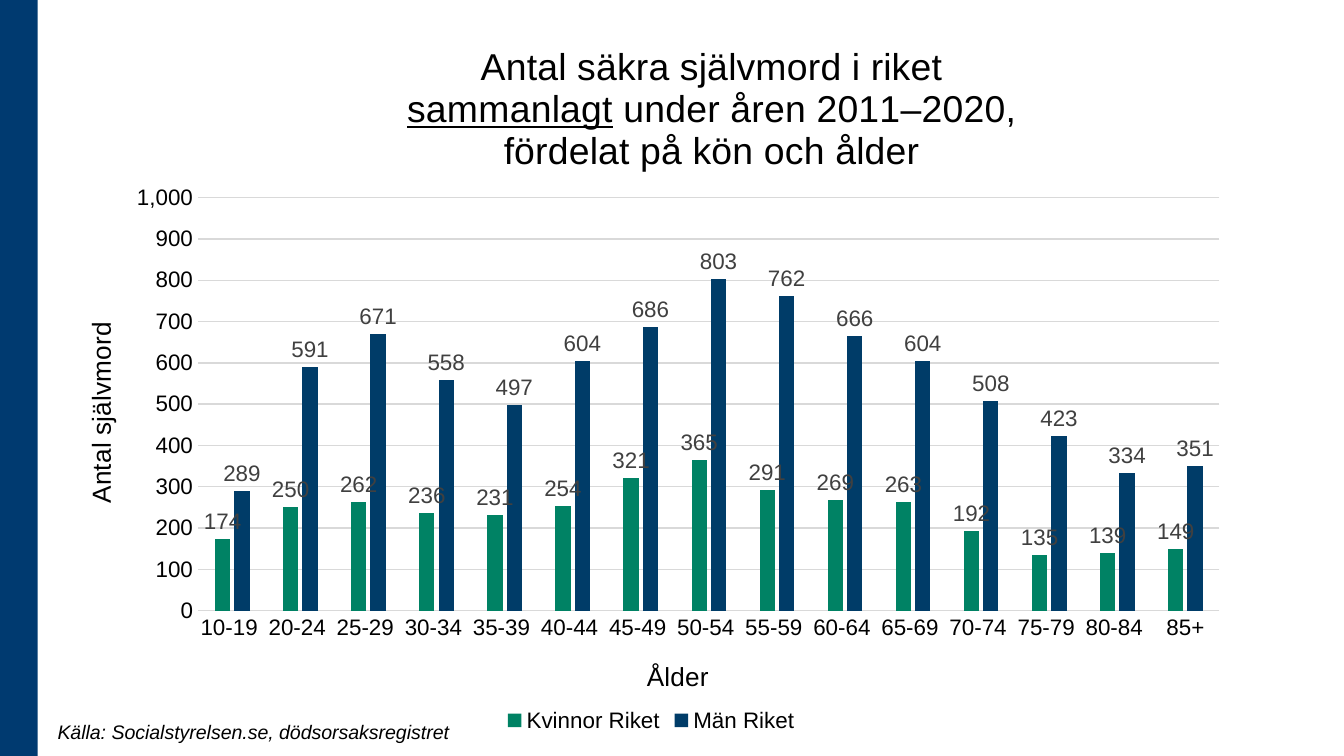
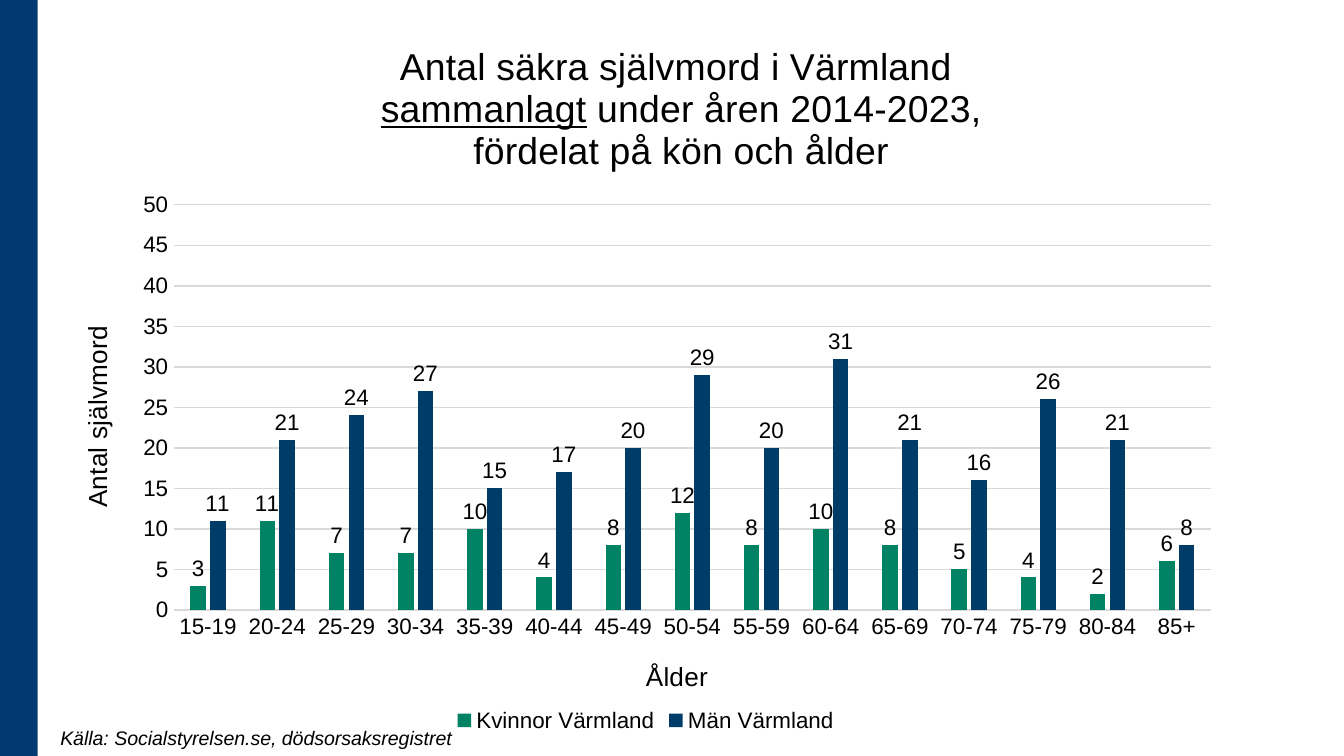
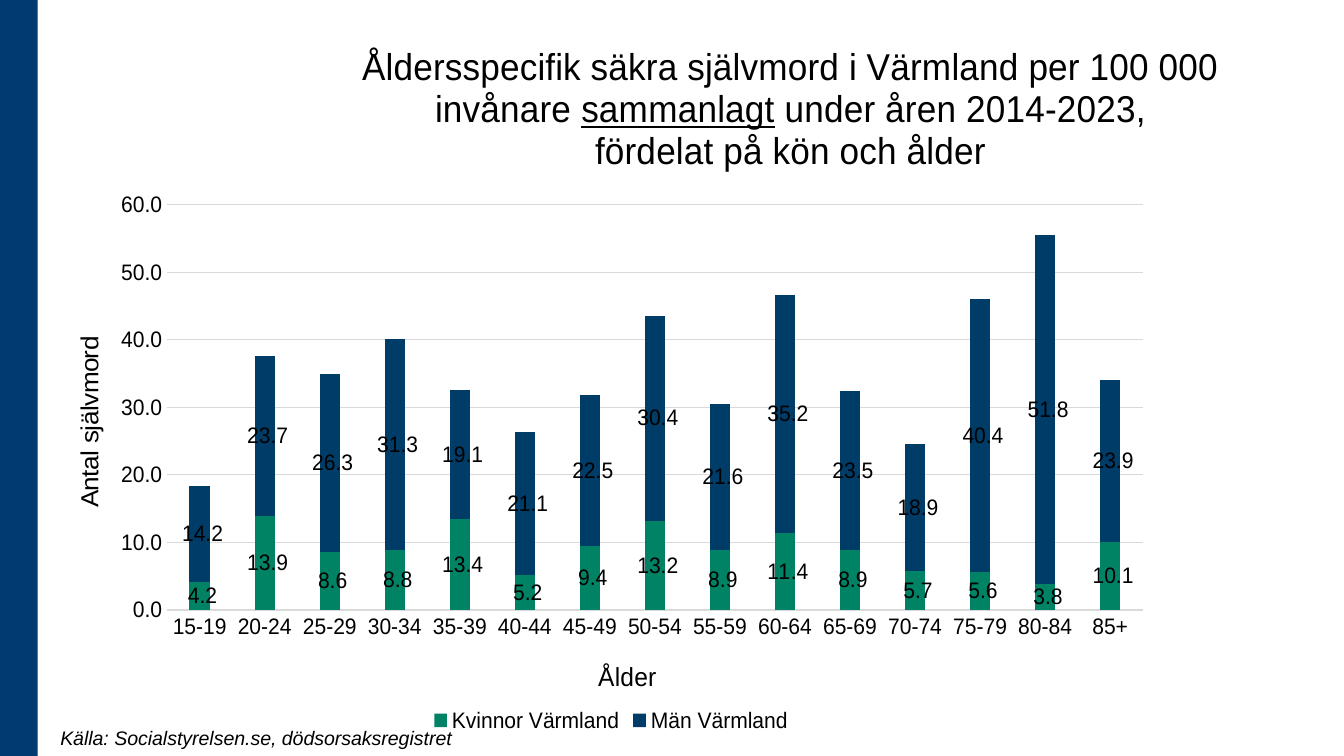
"""Build three slides with column charts of suicides by sex and age."""
from lxml import etree
from pptx import Presentation
from pptx.chart.data import CategoryChartData
from pptx.dml.color import RGBColor
from pptx.enum import chart as charts, shapes, text
from pptx.oxml.ns import qn
from pptx.util import Inches, Pt

FONT = "Arial"
BLACK, GRAY, GRID, BAND = "000000", "404040", "D9D9D9", "003A70"
SERIES_COLORS = ["008264", "003C68"]
SOURCE = "Källa: Socialstyrelsen.se, dödsorsaksregistret"
AGES = [f"{age}-{age + 4}" for age in range(20, 85, 5)]
CLUSTERED = charts.XL_CHART_TYPE.COLUMN_CLUSTERED
STACKED = charts.XL_CHART_TYPE.COLUMN_STACKED
OUTSIDE = charts.XL_LABEL_POSITION.OUTSIDE_END

VARMLAND = {
    "ages": ["15-19", *AGES, "85+"],
    "at": (0.51, 0.21, 8.59, 5.28),
    "plot": (9.1, 24.9, 89.9, 57.1),
    "title_at": (26.7, 1.7),
    "source_at": (0.35, 5.35, 3.29, 0.28),
    "label_color": BLACK,
}
SLIDES = [
    {
        "title": ["Antal säkra självmord i riket",
                  "_sammanlagt_ under åren 2011–2020,",
                  "fördelat på kön och ålder"],
        "ages": [f"{age} " for age in ["10-19", *AGES]] + ["85+"],
        "at": (0.59, 0.21, 8.51, 5.28),
        "plot": (10.4, 23.9, 89.3, 58.2),
        "title_at": (28.3, 1.7),
        "age_at": (49.2, 88.3),
        "count_at": (0, 40.7),
        "source_at": (0.33, 5.31, 3.2, 0.28),
        "label_color": GRAY,
        "type": CLUSTERED, "overlap": -27, "max": 1000,
        "format": "#,##0", "label_position": None,
        "series": {
            "Kvinnor Riket": [174, 250, 262, 236, 231, 254, 321, 365,
                              291, 269, 263, 192, 135, 139, 149],
            "Män Riket": [289, 591, 671, 558, 497, 604, 686, 803,
                          762, 666, 604, 508, 423, 334, 351],
        },
    },
    {
        **VARMLAND,
        "title": ["Antal säkra självmord i Värmland ",
                  "_sammanlagt_ under åren 2014-2023,",
                  "fördelat på kön och ålder"],
        "age_at": (49.6, 88.3),
        "count_at": (0.6, 41.3),
        "type": CLUSTERED, "overlap": -27, "max": 50,
        "format": "#,##0", "label_position": OUTSIDE,
        "series": {
            "Kvinnor Värmland": [3, 11, 7, 7, 10, 4, 8, 12,
                                 8, 10, 8, 5, 4, 2, 6],
            "Män Värmland": [11, 21, 24, 27, 15, 17, 20, 29,
                             20, 31, 21, 16, 26, 21, 8],
        },
    },
    {
        **VARMLAND,
        "title": ["Åldersspecifik säkra självmord i Värmland per 100 000 "
                  "invånare _sammanlagt_ under åren 2014-2023,",
                  "fördelat på kön och ålder"],
        "age_at": (48.4, 88.3),
        "count_at": (0, 41.3),
        "type": STACKED, "overlap": 100, "max": 60,
        "format": r"#\ ##0.0", "label_position": None,
        "series": {
            "Kvinnor Värmland": [4.2, 13.9, 8.6, 8.8, 13.4, 5.2, 9.4, 13.2,
                                 8.9, 11.4, 8.9, 5.7, 5.6, 3.8, 10.1],
            "Män Värmland": [14.2, 23.7, 26.3, 31.3, 19.1, 21.1, 22.5, 30.4,
                             21.6, 35.2, 23.5, 18.9, 40.4, 51.8, 23.9],
        },
    },
]


def inches(values):
    return [Inches(value) for value in values]


def assign(target, **values):
    for name, value in values.items():
        setattr(target, name, value)


def paint(fill, color):
    fill.solid()
    fill.fore_color.rgb = RGBColor.from_string(color)


def style(font, size, color=BLACK, **values):
    assign(font, name=FONT, size=Pt(size), **{"bold": False, **values})
    font.color.rgb = RGBColor.from_string(color)


def rule(line):
    paint(line.fill, GRID)
    line.width = Pt(0.75)


def place(parent, *percents):
    """Give a chart part a manual layout, in percent of the chart."""
    layout = parent.find(qn("c:layout"))
    if layout is None:
        layout = etree.Element(qn("c:layout"))
        parent.insert(0, layout)
    values = {"layoutTarget": "inner"} if len(percents) == 4 else {}
    values.update(xMode="edge", yMode="edge")
    for name, percent in zip("xywh", percents):
        values[name] = round(percent / 100, 3)
    manual = etree.SubElement(layout, qn("c:manualLayout"))
    for name, value in values.items():
        etree.SubElement(manual, qn(f"c:{name}")).set("val", str(value))


def write_title(title, lines, size, position):
    """Write lines into a chart or axis title, underlining _marked_ words."""
    frame = title.text_frame
    for number, line in enumerate(lines):
        para = frame.add_paragraph() if number else frame.paragraphs[0]
        for index, part in enumerate(line.split("_")):
            if part:
                span = para.add_run()
                span.text = part
                style(span.font, size, underline=index % 2 == 1)
    place(title._element, *position)


def format_axis(axis, caption, position, number_format):
    none = charts.XL_TICK_MARK.NONE
    assign(axis, major_tick_mark=none, minor_tick_mark=none)
    style(axis.tick_labels.font, 12)
    assign(axis.tick_labels, number_format=number_format,
           number_format_is_linked=False)
    write_title(axis.axis_title, [caption], 14, position)


def add_chart(page, content):
    data = CategoryChartData(number_format=content["format"])
    data.categories = content["ages"]
    for name, values in content["series"].items():
        data.add_series(name, values)
    chart = page.shapes.add_chart(
        content["type"], *inches(content["at"]), data).chart
    style(chart.font, 10)
    chart.has_title = True
    write_title(chart.chart_title, content["title"], 20, content["title_at"])

    chart.has_legend = True
    assign(chart.legend, position=charts.XL_LEGEND_POSITION.BOTTOM,
           include_in_layout=False)
    style(chart.legend.font, 12)

    ages, counts = chart.category_axis, chart.value_axis
    format_axis(ages, "Ålder", content["age_at"], "General")
    format_axis(counts, "Antal självmord", content["count_at"],
                content["format"])
    rule(ages.format.line)
    counts.format.line.fill.background()
    assign(counts, maximum_scale=content["max"], has_major_gridlines=True)
    rule(counts.major_gridlines.format.line)

    plot = chart.plots[0]
    assign(plot, gap_width=219, overlap=content["overlap"],
           vary_by_categories=False)
    for series, color in zip(plot.series, SERIES_COLORS):
        paint(series.format.fill, color)
        labels = series.data_labels
        style(labels.font, 12, content["label_color"])
        assign(labels, show_value=True, number_format=content["format"],
               number_format_is_linked=False)
        if content["label_position"] is not None:
            labels.position = content["label_position"]
    place(chart._chartSpace.find(".//" + qn("c:plotArea")), *content["plot"])


def add_source(page, position):
    frame = page.shapes.add_textbox(*inches(position)).text_frame
    assign(frame, word_wrap=True, auto_size=text.MSO_AUTO_SIZE.SHAPE_TO_FIT_TEXT)
    span = frame.paragraphs[0].add_run()
    span.text = SOURCE
    style(span.font, 10.5, italic=True)


def add_master_band(deck, page):
    """Draw the side band and move it to the master, behind everything."""
    band = page.shapes.add_shape(
        shapes.MSO_SHAPE.RECTANGLE, 0, 0, Inches(0.28), deck.slide_height)
    band.shadow.inherit = False
    paint(band.fill, BAND)
    band.line.fill.background()
    deck.slide_master.shapes._spTree.insert(2, band._element)


def main():
    deck = Presentation()
    deck.slide_width = Inches(10)
    deck.slide_height = deck.slide_width * 9 // 16
    for content in SLIDES:
        page = deck.slides.add_slide(deck.slide_layouts[6])
        add_chart(page, content)
        add_source(page, content["source_at"])
    add_master_band(deck, deck.slides[0])
    deck.save("out.pptx")


if __name__ == "__main__":
    main()
